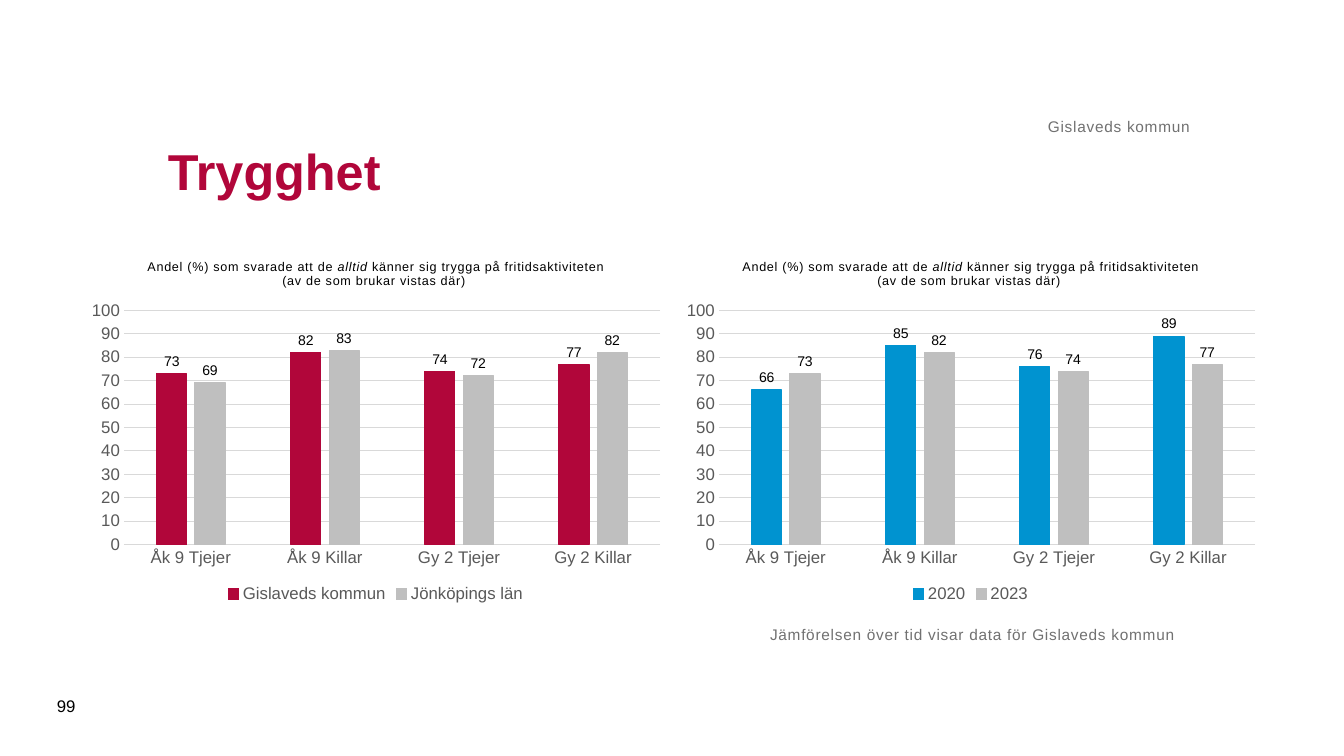
from dataclasses import dataclass

from pptx import Presentation
from pptx.chart.data import CategoryChartData
from pptx.dml.color import RGBColor
from pptx.enum.chart import XL_CHART_TYPE, XL_LABEL_POSITION, XL_LEGEND_POSITION, XL_TICK_MARK
from pptx.enum.text import MSO_ANCHOR, PP_ALIGN
from pptx.util import Emu, Pt

EMU_PER_INCH = 914400
PX_PER_INCH = 100.8


@dataclass(frozen=True)
class Theme:
    font: str = "Arial"
    crimson: str = "B1063A"
    blue: str = "0093D0"
    silver: str = "BFBFBF"
    grid: str = "D9D9D9"
    axis: str = "595959"
    note: str = "717171"
    black: str = "000000"
    heading_size: int = 36
    axis_size: int = 12
    note_size: int = 11
    label_size: int = 10
    question_size: int = 9
    hairline: float = 0.75


THEME = Theme()
GROUPS = ["Åk 9 Tjejer", "Åk 9 Killar", "Gy 2 Tjejer", "Gy 2 Killar"]
QUESTION = [
    ("Andel (%) som svarade att de ", False),
    ("alltid", True),
    (" känner sig trygga på fritidsaktiviteten (av de som brukar vistas där) ", False),
]
WHOLE_NUMBER = "#,##0;#,##0"


def px(length):
    return Emu(round(length * EMU_PER_INCH / PX_PER_INCH))


def rgb(color):
    return RGBColor.from_string(color)


def style_font(font, size, color, bold=False, italic=False):
    font.name = THEME.font
    font.size = Pt(size)
    font.color.rgb = rgb(color)
    font.bold = bold
    font.italic = italic


def add_run(paragraph, text, size, color, bold=False, italic=False, spaced=False):
    run = paragraph.add_run()
    run.text = text
    style_font(run.font, size, color, bold, italic)
    if spaced:
        run.font._element.set("spc", "50")


def add_text(slide, box, text, size, color, bold=False, spaced=False,
             anchor=MSO_ANCHOR.MIDDLE, align=PP_ALIGN.LEFT, inset=True):
    frame = slide.shapes.add_textbox(*map(px, box)).text_frame
    frame.word_wrap = True
    frame.vertical_anchor = anchor
    if not inset:
        frame.margin_left = frame.margin_right = 0
        frame.margin_top = frame.margin_bottom = 0
    paragraph = frame.paragraphs[0]
    paragraph.alignment = align
    add_run(paragraph, text, size, color, bold, spaced=spaced)


def style_line(line, color):
    line.color.rgb = rgb(color)
    line.width = Pt(THEME.hairline)


def style_axes(chart):
    for axis in (chart.category_axis, chart.value_axis):
        axis.major_tick_mark = axis.minor_tick_mark = XL_TICK_MARK.NONE
        style_font(axis.tick_labels.font, THEME.axis_size, THEME.axis)
    style_line(chart.category_axis.format.line, THEME.grid)
    scale = chart.value_axis
    scale.minimum_scale, scale.maximum_scale, scale.major_unit = 0, 100, 10
    scale.format.line.fill.background()
    style_line(scale.major_gridlines.format.line, THEME.grid)
    scale.tick_labels.number_format = WHOLE_NUMBER
    scale.tick_labels.number_format_is_linked = False


def style_series(series, color):
    series.format.fill.solid()
    series.format.fill.fore_color.rgb = rgb(color)
    style_line(series.format.line, color)
    labels = series.data_labels
    labels.show_value = True
    labels.position = XL_LABEL_POSITION.OUTSIDE_END
    labels.number_format = WHOLE_NUMBER
    labels.number_format_is_linked = False
    style_font(labels.font, THEME.label_size, THEME.black)


def add_safety_chart(slide, box, answers, accent):
    data = CategoryChartData(number_format="0")
    data.categories = GROUPS
    for name, shares in answers.items():
        data.add_series(name, shares)
    chart = slide.shapes.add_chart(
        XL_CHART_TYPE.COLUMN_CLUSTERED, *map(px, box), data).chart
    style_font(chart.font, THEME.label_size, THEME.black)

    chart.has_title = True
    chart.chart_title.include_in_layout = False
    question = chart.chart_title.text_frame.paragraphs[0]
    for text, italic in QUESTION:
        add_run(question, text, THEME.question_size, THEME.black,
                italic=italic, spaced=True)

    chart.has_legend = True
    chart.legend.position = XL_LEGEND_POSITION.BOTTOM
    chart.legend.include_in_layout = False
    style_font(chart.legend.font, THEME.axis_size, THEME.axis)

    style_axes(chart)
    columns = chart.plots[0]
    columns.gap_width = 219
    columns.overlap = -27
    columns.vary_by_categories = False
    for series, color in zip(columns.series, (accent, THEME.silver)):
        style_series(series, color)


def main():
    deck = Presentation()
    deck.slide_width, deck.slide_height = px(1344), px(756)
    slide = deck.slides.add_slide(deck.slide_layouts[6])

    add_safety_chart(slide, (80, 242, 592, 365), {
        "Gislaveds kommun": (73, 82, 74, 77),
        "Jönköpings län": (69, 83, 72, 82),
    }, THEME.crimson)
    add_safety_chart(slide, (675, 242, 592, 365), {
        "2020": (66, 85, 76, 89),
        "2023": (73, 82, 74, 77),
    }, THEME.blue)

    add_text(slide, (158, 99, 1032, 143), "Trygghet",
             THEME.heading_size, THEME.crimson, bold=True)
    add_text(slide, (770, 625, 535, 95),
             "Jämförelsen över tid visar data för Gislaveds kommun",
             THEME.note_size, THEME.note, spaced=True,
             anchor=MSO_ANCHOR.TOP, inset=False)
    add_text(slide, (158, 62, 1032, 74), "Gislaveds kommun",
             THEME.note_size, THEME.note, spaced=True,
             anchor=MSO_ANCHOR.BOTTOM, align=PP_ALIGN.RIGHT, inset=False)
    add_text(slide, (47, 686, 57, 40), "99", THEME.axis_size, THEME.black)

    deck.save("out.pptx")


if __name__ == "__main__":
    main()
